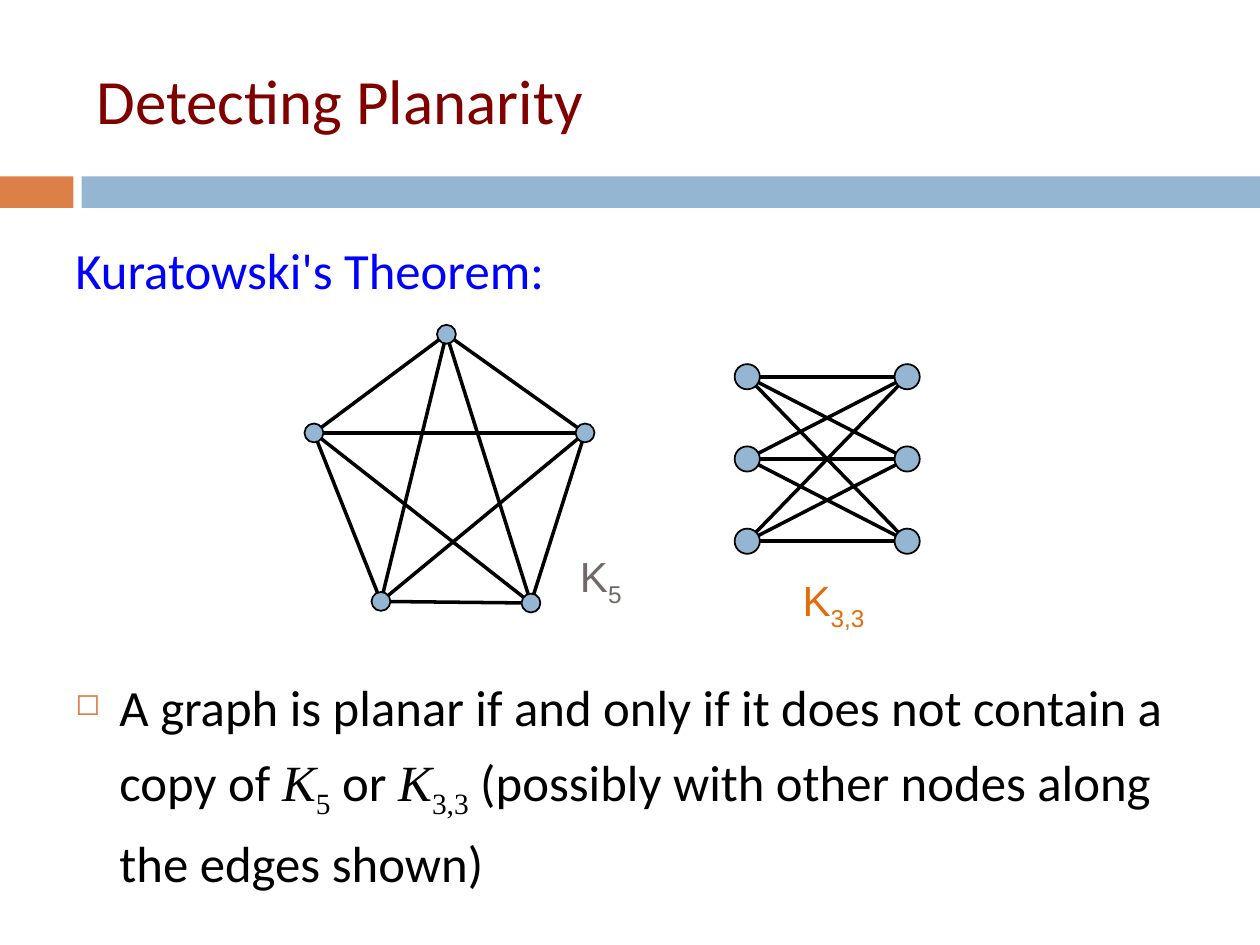
import itertools
import math

import lxml.etree
import pptx
import pptx.dml.color
import pptx.enum.shapes
import pptx.enum.text
import pptx.oxml.ns
import pptx.util

Pt = pptx.util.Pt
RGBColor = pptx.dml.color.RGBColor
SHAPE = pptx.enum.shapes.MSO_SHAPE
ANCHOR = pptx.enum.text.MSO_ANCHOR
ALIGN = pptx.enum.text.PP_ALIGN

ORANGE = RGBColor(0xDD, 0x80, 0x47)
SKY = RGBColor(0x94, 0xB6, 0xD2)
MAROON = RGBColor(0x80, 0x00, 0x00)
BLUE = RGBColor(0x00, 0x00, 0xFF)
BLACK = RGBColor(0x00, 0x00, 0x00)
GREY = RGBColor(0x72, 0x68, 0x68)
AMBER = RGBColor(0xE4, 0x6C, 0x0A)

PLACEHOLDER_INSETS = {"margin_left": Pt(7.2), "margin_top": Pt(3.6),
                      "margin_right": Pt(10), "margin_bottom": Pt(3.6)}
LABEL_INSETS = {"margin_left": 0, "margin_top": 0,
                "margin_right": Pt(3), "margin_bottom": 0}


def apply_format(target, values):
    """Set each named attribute of the target."""
    for name, value in values.items():
        setattr(target, name, value)


def add_text_frame(shapes, box, insets, anchor=ANCHOR.TOP):
    """Add a wrapping text box and return its frame."""
    frame = shapes.add_textbox(*map(Pt, box)).text_frame
    apply_format(frame, {"word_wrap": True, "vertical_anchor": anchor, **insets})
    return frame


def add_run(paragraph, text, size, color, font="Calibri", italic=False, subscript=False):
    """Append a formatted run to the paragraph."""
    run = paragraph.add_run()
    run.text = text
    apply_format(run.font, {"size": Pt(size), "name": font, "italic": italic})
    run.font.color.rgb = color
    if subscript:
        run.font._element.set("baseline", "-25000")


def add_bullet(paragraph, symbol, color, percent, indent):
    """Give the paragraph a hanging bullet."""
    properties = paragraph._p.get_or_add_pPr()
    properties.set("marL", str(Pt(indent)))
    properties.set("indent", str(-Pt(indent)))
    qn = pptx.oxml.ns.qn
    bullet_color = lxml.etree.SubElement(properties, qn("a:buClr"))
    lxml.etree.SubElement(bullet_color, qn("a:srgbClr"), val=str(color))
    lxml.etree.SubElement(properties, qn("a:buSzPct"), val=str(percent * 1000))
    lxml.etree.SubElement(properties, qn("a:buChar"), char=symbol)


def add_filled(shapes, preset, box, color):
    """Add a flat filled shape and return it."""
    shape = shapes.add_shape(preset, *map(Pt, box))
    shape.shadow.inherit = False
    shape.fill.solid()
    shape.fill.fore_color.rgb = color
    shape.line.fill.background()
    return shape


def add_node(shapes, center, radius):
    """Add an outlined graph node."""
    x, y = center
    box = (x - radius, y - radius, 2 * radius, 2 * radius)
    node = add_filled(shapes, SHAPE.OVAL, box, SKY)
    node.line.color.rgb = BLACK
    node.line.width = Pt(1)


def add_edge(shapes, start, end, radius):
    """Join the rims of two nodes with a line."""
    (x1, y1), (x2, y2) = start, end
    share = radius / math.dist(start, end)
    dx, dy = (x2 - x1) * share, (y2 - y1) * share
    ends = (x1 + dx, y1 + dy, x2 - dx, y2 - dy)
    edge = shapes.add_connector(pptx.enum.shapes.MSO_CONNECTOR.STRAIGHT, *map(Pt, ends))
    edge.line.color.rgb = BLACK
    edge.line.width = Pt(2)
    lxml.etree.SubElement(edge._element.spPr, pptx.oxml.ns.qn("a:effectLst"))


def add_graph(slide, nodes, edges, radius, subscript, label_box, label_color):
    """Add a grouped graph with its K label."""
    shapes = slide.shapes.add_group_shape().shapes
    for node in nodes:
        add_node(shapes, node, radius)
    for start, end in edges:
        add_edge(shapes, start, end, radius)
    label = add_text_frame(shapes, label_box, LABEL_INSETS).paragraphs[0]
    apply_format(label, {"alignment": ALIGN.CENTER, "space_before": Pt(14)})
    label._p.get_or_add_pPr().set("marL", str(Pt(3)))
    add_run(label, "K", 24, label_color, "Arial")
    add_run(label, subscript, 24, label_color, "Arial", subscript=True)


def add_theorem(slide):
    """Add the theorem heading and its statement."""
    frame = add_text_frame(slide.shapes, (36, 126, 648, 393), PLACEHOLDER_INSETS)
    heading = frame.paragraphs[0]
    heading.line_spacing = 1.2
    add_run(heading, "Kuratowski's Theorem:", 29, BLUE)
    statement = frame.add_paragraph()
    apply_format(statement, {"line_spacing": 1.2, "space_before": Pt(208)})
    add_bullet(statement, "◻", ORANGE, 60, 25.2)
    math_font = "Times New Roman"
    add_run(statement, "A graph is planar if and only if it does not contain a copy of ", 29, BLACK)
    for subscript, following in (
        ("5", " or "),
        ("3,3", " (possibly with other nodes along the edges shown)"),
    ):
        add_run(statement, "K", 29, BLACK, math_font, italic=True)
        add_run(statement, subscript, 29, BLACK, math_font, subscript=True)
        add_run(statement, following, 29, BLACK)


def main():
    """Build the planarity slide."""
    deck = pptx.Presentation()
    apply_format(deck, {"slide_width": Pt(720), "slide_height": Pt(540)})
    slide = deck.slides.add_slide(deck.slide_layouts[6])

    add_filled(slide.shapes, SHAPE.RECTANGLE, (0, 100.8, 42, 18), ORANGE)
    add_filled(slide.shapes, SHAPE.RECTANGLE, (46.6, 100.8, 673.4, 18), SKY)
    title = add_text_frame(slide.shapes, (48, 18, 642, 78), PLACEHOLDER_INSETS, ANCHOR.MIDDLE)
    add_run(title.paragraphs[0], "Detecting Planarity", 36, MAROON)
    add_theorem(slide)

    pentagon = [(179.4, 247.4), (255.1, 191), (334.3, 247.4), (217.7, 343.7), (303.4, 344.6)]
    add_graph(slide, pentagon, itertools.combinations(pentagon, 2), 5.4,
              "5", (303, 314.6, 80.6, 33), GREY)

    left, right = ([(x, 215.3 + 47 * row) for row in range(3)] for x in (427, 518.4))
    add_graph(slide, left + right, itertools.product(left, right), 7.2,
              "3,3", (409.7, 328.3, 133.2, 28), AMBER)

    deck.save("out.pptx")


if __name__ == "__main__":
    main()
